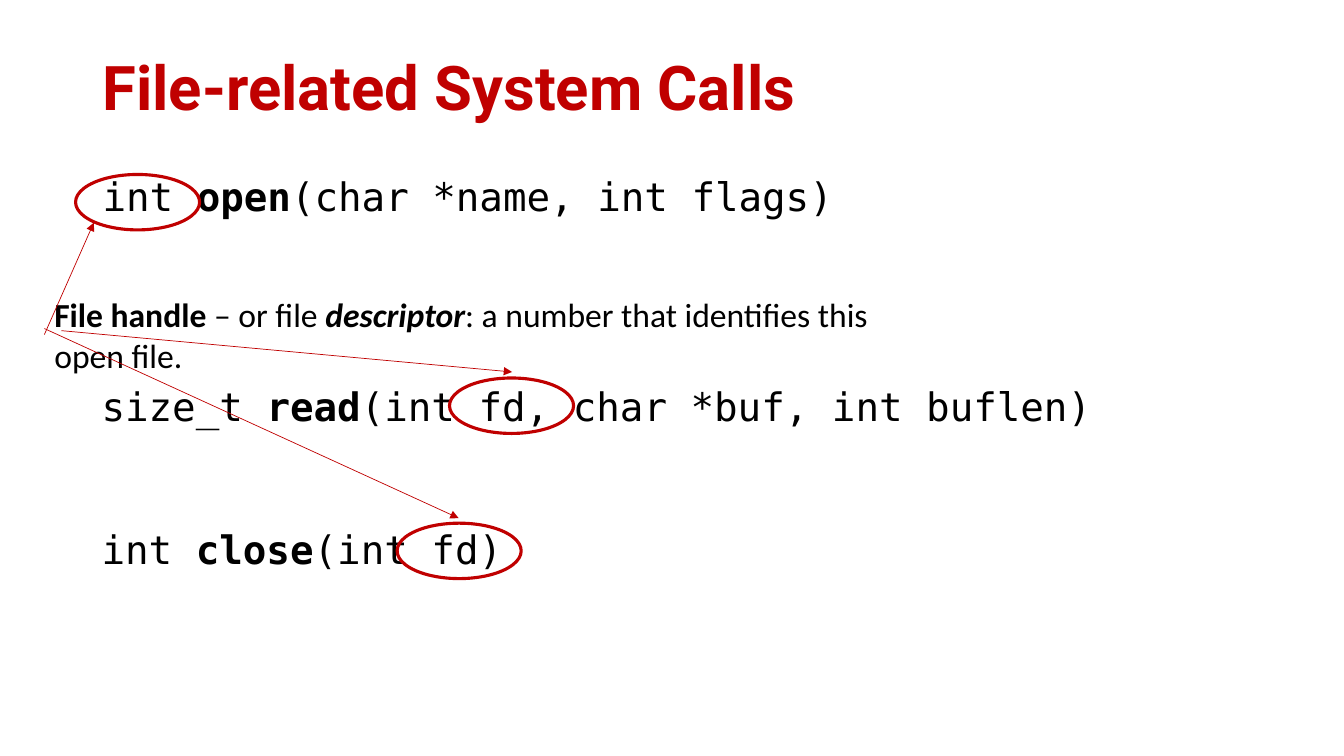
from pptx import Presentation
from pptx.dml.color import RGBColor
from pptx.enum.shapes import MSO_CONNECTOR, MSO_SHAPE
from pptx.enum.text import MSO_ANCHOR
from pptx.oxml.ns import qn
from pptx.util import Pt
from lxml.etree import SubElement

RED = "C00000"
BLACK = "000000"
MONO = "DejaVu Sans Mono"


def paint(target, color):
    """Give a font or line colour from a hex string."""
    target.rgb = RGBColor.from_string(color)


def add_text(slide, box, runs, font, size, color=BLACK, line=None, before=0):
    """Add a wrapped text box from (text, style) runs and return its frame."""
    frame = slide.shapes.add_textbox(*map(Pt, box)).text_frame
    frame.word_wrap = True
    para = frame.paragraphs[0]
    para.line_spacing = line
    para.space_before = Pt(before)
    for text, style in runs:
        run = para.add_run()
        run.text = text
        run.font.name = font
        run.font.size = Pt(size)
        run.font.bold = "b" in style
        run.font.italic = "i" in style
        paint(run.font.color, color)
    return frame


def add_call(slide, left, top, kind, name, args):
    """Add one function signature with a bold name."""
    runs = [(kind + " ", ""), (name, "b"), (args, "")]
    add_text(slide, (left, top, 828, 39.6), runs, MONO, 28, line=0.9, before=10)


def add_ring(slide, left, top):
    """Add a hollow red ellipse around a file handle."""
    ring = slide.shapes.add_shape(
        MSO_SHAPE.OVAL, Pt(left), Pt(top), Pt(88.6), Pt(39.6))
    ring.shadow.inherit = False
    ring.fill.background()
    paint(ring.line.color, RED)
    ring.line.width = Pt(2.25)


def add_arrow(slide, start, end):
    """Add a thin red arrow between two points."""
    arrow = slide.shapes.add_connector(
        MSO_CONNECTOR.STRAIGHT, *map(Pt, start + end))
    paint(arrow.line.color, RED)
    arrow.line.width = Pt(0.5)
    SubElement(arrow.line._get_or_add_ln(), qn("a:tailEnd"), type="triangle")
    SubElement(arrow._element.spPr, qn("a:effectLst"))


def main():
    """Build the slide and save it."""
    deck = Presentation()
    deck.slide_width, deck.slide_height = Pt(960), Pt(540)
    slide = deck.slides.add_slide(deck.slide_layouts[6])

    title = add_text(slide, (66.2, 12.2, 828, 104.4),
                     [("File-related System Calls", "b")],
                     "Roboto", 44, RED, line=0.9)
    title.vertical_anchor = MSO_ANCHOR.MIDDLE

    add_call(slide, 66.2, 123.1, "int", "open", "(char *name, int flags)")
    add_ring(slide, 54, 124.6)
    note = [("File handle ", "b"), ("– or file ", ""), ("descriptor", "bi"),
            (": a number that identifies this open file.", "")]
    add_text(slide, (31.7, 206.6, 620.6, 65.5), note, "Calibri", 24)
    add_arrow(slide, (31.7, 239), (67, 159.1))

    add_call(slide, 65.5, 273.6, "size_t", "read",
             "(int fd, char *buf, int buflen)")
    add_ring(slide, 321.1, 270)
    add_arrow(slide, (43.9, 236.2), (365.8, 265.7))

    add_call(slide, 65.5, 375.8, "int", "close", "(int fd)")
    add_ring(slide, 283.7, 373.7)
    add_arrow(slide, (31.7, 234.7), (327.6, 370.1))
    deck.save("out.pptx")


if __name__ == "__main__":
    main()
